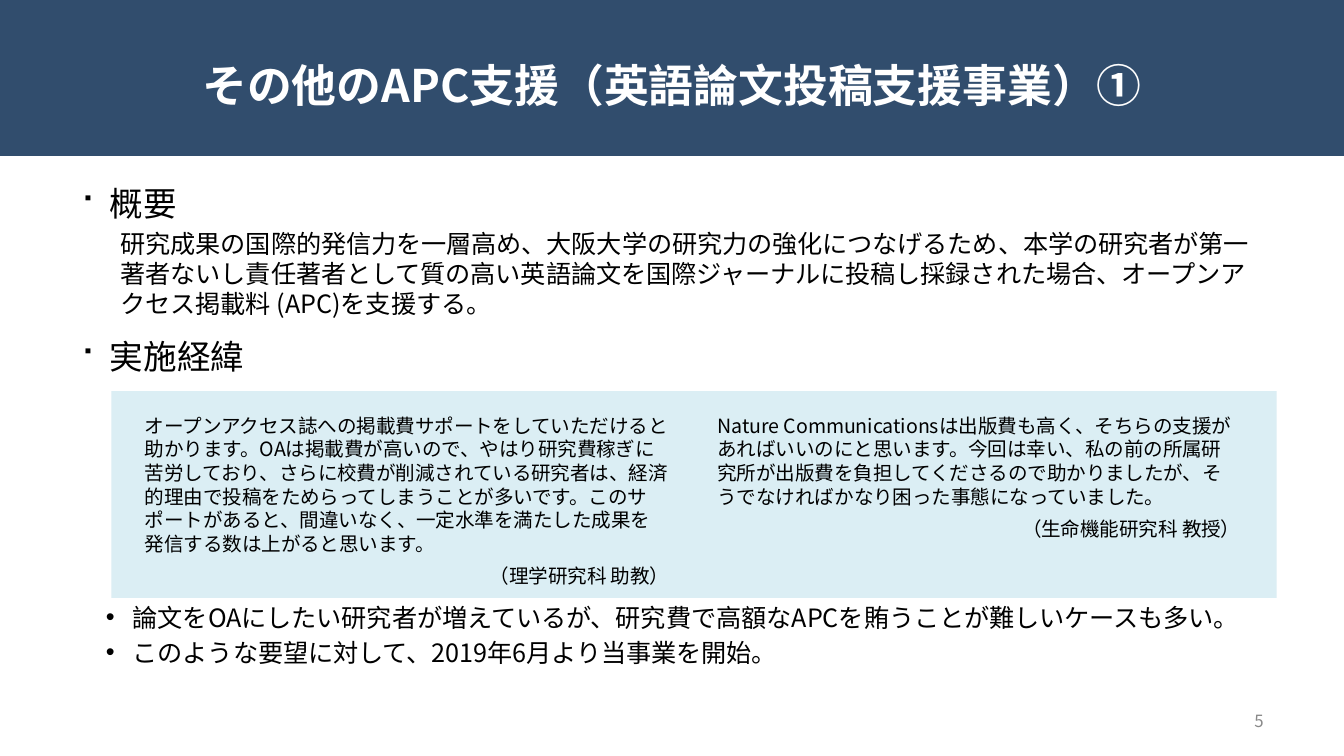
"""Build the slide on support for article processing charges."""
from lxml import etree
from pptx import Presentation
from pptx.dml.color import RGBColor
from pptx.enum.shapes import MSO_SHAPE
from pptx.enum.text import MSO_ANCHOR, PP_ALIGN
from pptx.oxml.ns import qn
from pptx.util import Inches, Pt

RECT = MSO_SHAPE.RECTANGLE
TOP, MIDDLE = MSO_ANCHOR.TOP, MSO_ANCHOR.MIDDLE
LEFT, CENTER, RIGHT = PP_ALIGN.LEFT, PP_ALIGN.CENTER, PP_ALIGN.RIGHT
FONT = "Noto Sans CJK JP"
NAVY, PALE, WHITE, BLACK, GREY = "314D6D", "DBEEF4", "FFFFFF", "000000", "898989"

HEADING = {"size": 18, "before": 9, "indent": 0.22, "hang": 0.22, "bullet": ("Wingdings", "■")}
BODY = {"size": 13.5, "before": 2.7, "indent": 0.3}
POINT = {"size": 13.5, "before": 2.7, "indent": 0.39, "hang": 0.2, "bullet": ("Arial", "•")}
QUOTE = {"size": 10.5}
SOURCE = {"size": 10.5, "before": 4.5, "align": RIGHT}

TITLE = [("その他のAPC支援（英語論文投稿支援事業）①",
          {"size": 24, "color": WHITE, "bold": True, "align": CENTER})]
PAGE = [("5", {"size": 9, "color": GREY, "align": RIGHT})]
OVERVIEW = [
    ("概要", HEADING),
    ("研究成果の国際的発信力を一層高め、大阪大学の研究力の強化につなげるため、"
     "本学の研究者が第一著者ないし責任著者として質の高い英語論文を国際ジャーナルに"
     "投稿し採録された場合、オープンアクセス掲載料 (APC)を支援する。", BODY),
    ("実施経緯", HEADING),
]
POINTS = [
    ("論文をOAにしたい研究者が増えているが、研究費で高額なAPCを賄うことが難しいケースも多い。", POINT),
    ("このような要望に対して、2019年6月より当事業を開始。", POINT),
]
QUOTES = [
    ("オープンアクセス誌への掲載費サポートをしていただけると助かります。"
     "OAは掲載費が高いので、やはり研究費稼ぎに苦労しており、さらに校費が削減されている研究者は、"
     "経済的理由で投稿をためらってしまうことが多いです。このサポートがあると、間違いなく、"
     "一定水準を満たした成果を発信する数は上がると思います。", "（理学研究科 助教）", 4.1, 1.41),
    ("Nature Communicationsは出版費も高く、そちらの支援があればいいのにと思います。"
     "今回は幸い、私の前の所属研究所が出版費を負担してくださるので助かりましたが、"
     "そうでなければかなり困った事態になっていました。", "（生命機能研究科 教授）", 4.09, 1.05),
]
QUOTE_LEFT, QUOTE_TOP, QUOTE_STEP = 0.98, 3.03, 4.26


def rgb(color):
    """Turn a hex string into a colour."""
    return RGBColor.from_string(color)


def write(sp, paragraphs, anchor=TOP):
    """Fill a shape with formatted paragraphs."""
    tf = sp.text_frame
    tf.word_wrap, tf.vertical_anchor = True, anchor
    for i, (text, look) in enumerate(paragraphs):
        p = tf.paragraphs[0] if i == 0 else tf.add_paragraph()
        spacing = {"alignment": look.get("align", LEFT),
                   "line_spacing": Pt(round(look["size"] * 1.2, 1)),
                   "space_before": Pt(look.get("before", 0) if i else 0)}
        for name, value in spacing.items():
            setattr(p, name, value)
        pPr = p._p.get_or_add_pPr()
        pPr.set("marL", str(Inches(look.get("indent", 0))))
        pPr.set("indent", str(-Inches(look.get("hang", 0))))
        if "bullet" in look:
            typeface, char = look["bullet"]
            etree.SubElement(pPr, qn("a:buFont"), typeface=typeface)
            etree.SubElement(pPr, qn("a:buChar"), char=char)
        r = p.add_run()
        r.text = text
        font = {"size": Pt(look["size"]), "bold": look.get("bold", False), "name": FONT}
        for name, value in font.items():
            setattr(r.font, name, value)
        r.font.color.rgb = rgb(look.get("color", BLACK))
        etree.SubElement(r._r.get_or_add_rPr(), qn("a:ea"), typeface=FONT)


def add_text(s, box, paragraphs, anchor=TOP):
    """Add a text box."""
    write(s.shapes.add_textbox(*map(Inches, box)), paragraphs, anchor)


def add_rect(s, box, color):
    """Add a plain filled rectangle."""
    sp = s.shapes.add_shape(RECT, *map(Inches, box))
    sp.shadow.inherit = False
    sp.fill.solid()
    sp.fill.fore_color.rgb = rgb(color)
    sp.line.fill.background()
    return sp


def main():
    """Lay out the slide and save it."""
    prs = Presentation()
    prs.slide_width = Inches(10)
    prs.slide_height = prs.slide_width * 9 // 16
    s = prs.slides.add_slide(prs.slide_layouts[5])

    banner = add_rect(s, (0, 0, 10, 1.16), NAVY)
    s.shapes._spTree.insert(2, banner._element)
    title = s.shapes.title
    for name, value in zip(("left", "top", "width", "height"), (0.5, 0.1, 9, 1.06)):
        setattr(title, name, Inches(value))
    write(title, TITLE, MIDDLE)

    add_text(s, (7.17, 5.21, 2.33, 0.3), PAGE, MIDDLE)
    add_text(s, (0.5, 1.31, 9, 1.55), OVERVIEW)
    add_text(s, (0.5, 4.43, 8.7, 0.8), POINTS)

    add_rect(s, (0.83, 2.91, 8.67, 1.54), PALE)
    for i, (quote, source, width, height) in enumerate(QUOTES):
        box = (QUOTE_LEFT + i * QUOTE_STEP, QUOTE_TOP, width, height)
        write(add_rect(s, box, PALE), [(quote, QUOTE), (source, SOURCE)])

    prs.save("out.pptx")


if __name__ == "__main__":
    main()
